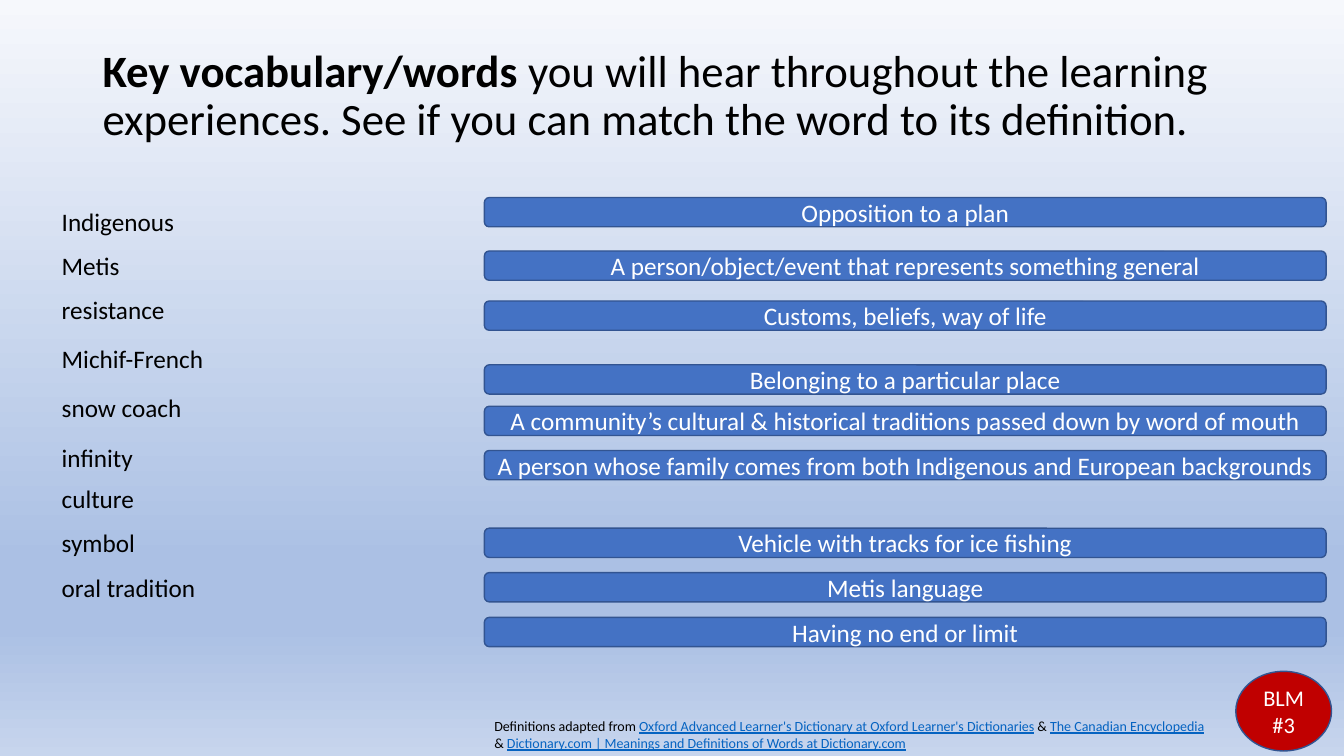
from lxml import etree
from pptx import Presentation
from pptx.dml.color import RGBColor
from pptx.enum.shapes import MSO_SHAPE
from pptx.enum.text import MSO_ANCHOR, MSO_AUTO_SIZE, PP_ALIGN
from pptx.oxml.ns import qn
from pptx.util import Pt

ROUNDED = MSO_SHAPE.ROUNDED_RECTANGLE
OVAL = MSO_SHAPE.OVAL
TOP = MSO_ANCHOR.TOP
MIDDLE = MSO_ANCHOR.MIDDLE
CENTER = PP_ALIGN.CENTER
LEFT = PP_ALIGN.LEFT
GROW = MSO_AUTO_SIZE.SHAPE_TO_FIT_TEXT

BLACK = RGBColor(0x00, 0x00, 0x00)
WHITE = RGBColor(0xFF, 0xFF, 0xFF)
BLUE = RGBColor(0x44, 0x72, 0xC4)
DARK_BLUE = RGBColor(0x32, 0x54, 0x91)
LINK_BLUE = RGBColor(0x05, 0x63, 0xC1)
RED = RGBColor(0xC0, 0x00, 0x00)
SKY_TOP = RGBColor(0xF6, 0xF8, 0xFC)
SKY_LOW = RGBColor(0xAB, 0xC0, 0xE4)
SKY_BOTTOM = RGBColor(0xC7, 0xD5, 0xED)

SKY = [(0, SKY_TOP), (74, SKY_LOW), (83, SKY_LOW), (100, SKY_BOTTOM)]
WORDS = [
    ("Indigenous", 144, 111.6),
    ("Metis", 175.5, 60.5),
    ("resistance", 206.6, 92.2),
    ("Michif-French", 241.5, 135.4),
    ("snow coach", 277, 111.6),
    ("infinity", 312.5, 77),
    ("culture", 341.5, 72),
    ("symbol", 373, 77),
    ("oral tradition", 405.4, 111.6),
]
DEFINITIONS = [
    ("Opposition to a plan", 141.1),
    ("A person/object/event that represents something general", 179.3),
    ("Customs, beliefs, way of life", 215),
    ("Belonging to a particular place", 260.6),
    ("A community’s cultural & historical traditions passed down by word of mouth", 290.2),
    ("A person whose family comes from both Indigenous and European backgrounds", 321.8),
    ("Vehicle with tracks for ice fishing", 377.3),
    ("Metis language", 409),
    ("Having no end or limit", 441),
]
SOURCES = [
    ("Definitions adapted from ", False),
    ("Oxford Advanced Learner's Dictionary at Oxford Learner's Dictionaries", True),
    (" & ", False),
    ("The Canadian Encyclopedia", True),
    (" & ", False),
    ("Dictionary.com | Meanings and Definitions of Words at Dictionary.com", True),
]


class VocabularyPage:
    """Draws the elements of a word-matching slide in one shared style."""

    font_name = "Calibri"

    def __init__(self, page):
        self.page = page

    def background(self, stops):
        fill = self.page.background.fill
        fill.gradient()
        fill.gradient_angle = 270
        stop_list = self.page.element.find(".//" + qn("a:gsLst"))
        for stop in list(stop_list):
            stop_list.remove(stop)
        for percent, color in stops:
            stop = etree.SubElement(stop_list, qn("a:gs"), pos=str(percent * 1000))
            etree.SubElement(stop, qn("a:srgbClr"), val=str(color))

    def style(self, span, size, color):
        span.font.name = self.font_name
        span.font.size = Pt(size)
        span.font.color.rgb = color

    def text(self, spans, left, top, width, height, size, anchor=TOP):
        box = self.page.shapes.add_textbox(Pt(left), Pt(top), Pt(width), Pt(height))
        frame = box.text_frame
        frame.word_wrap = True
        frame.vertical_anchor = anchor
        para = frame.paragraphs[0]
        para.alignment = LEFT
        for words in spans:
            span = para.add_run()
            span.text = words
            self.style(span, size, BLACK)
        return box

    def title(self, bold_words, words):
        box = self.text([bold_words, words], 66.2, 28.8, 828, 80.6, 32, MIDDLE)
        para = box.text_frame.paragraphs[0]
        para.line_spacing = 0.9
        para.runs[0].font.bold = True

    def word(self, words, top, width):
        box = self.text([words], 37, top, width, 28.8, 18)
        box.text_frame.auto_size = GROW

    def credits(self, sources):
        box = self.text([words for words, _ in sources], 346, 509, 529.2, 31.7, 10)
        box.text_frame.auto_size = GROW
        for span, (_, linked) in zip(box.text_frame.paragraphs[0].runs, sources):
            if linked:
                span.font.underline = True
                span.font.color.rgb = LINK_BLUE

    def shape(self, kind, words, left, top, width, height, fill, size):
        shape = self.page.shapes.add_shape(kind, Pt(left), Pt(top), Pt(width), Pt(height))
        shape.shadow.inherit = False
        shape.fill.solid()
        shape.fill.fore_color.rgb = fill
        shape.line.color.rgb = DARK_BLUE
        shape.line.width = Pt(1)
        frame = shape.text_frame
        frame.text = words
        frame.word_wrap = True
        frame.vertical_anchor = MIDDLE
        para = frame.paragraphs[0]
        para.alignment = CENTER
        for span in para.runs:
            self.style(span, size, WHITE)
        return shape

    def definition(self, words, top):
        self.shape(ROUNDED, words, 346, top, 601.2, 20.9, BLUE, 18)

    def badge(self, words):
        badge = self.shape(OVAL, words, 882.7, 479.5, 68.4, 56.9, RED, 16)
        badge.text_frame.paragraphs[0].space_after = Pt(6)


def main():
    deck = Presentation()
    deck.slide_width = Pt(960)
    deck.slide_height = Pt(540)
    page = VocabularyPage(deck.slides.add_slide(deck.slide_layouts[6]))
    page.background(SKY)
    page.title(
        "Key vocabulary/words ",
        "you will hear throughout the learning experiences. "
        "See if you can match the word to its definition.",
    )
    page.credits(SOURCES)
    for words, top in DEFINITIONS:
        page.definition(words, top)
    for words, top, width in WORDS:
        page.word(words, top, width)
    page.badge("BLM\v#3")
    deck.save("out.pptx")


if __name__ == "__main__":
    main()
